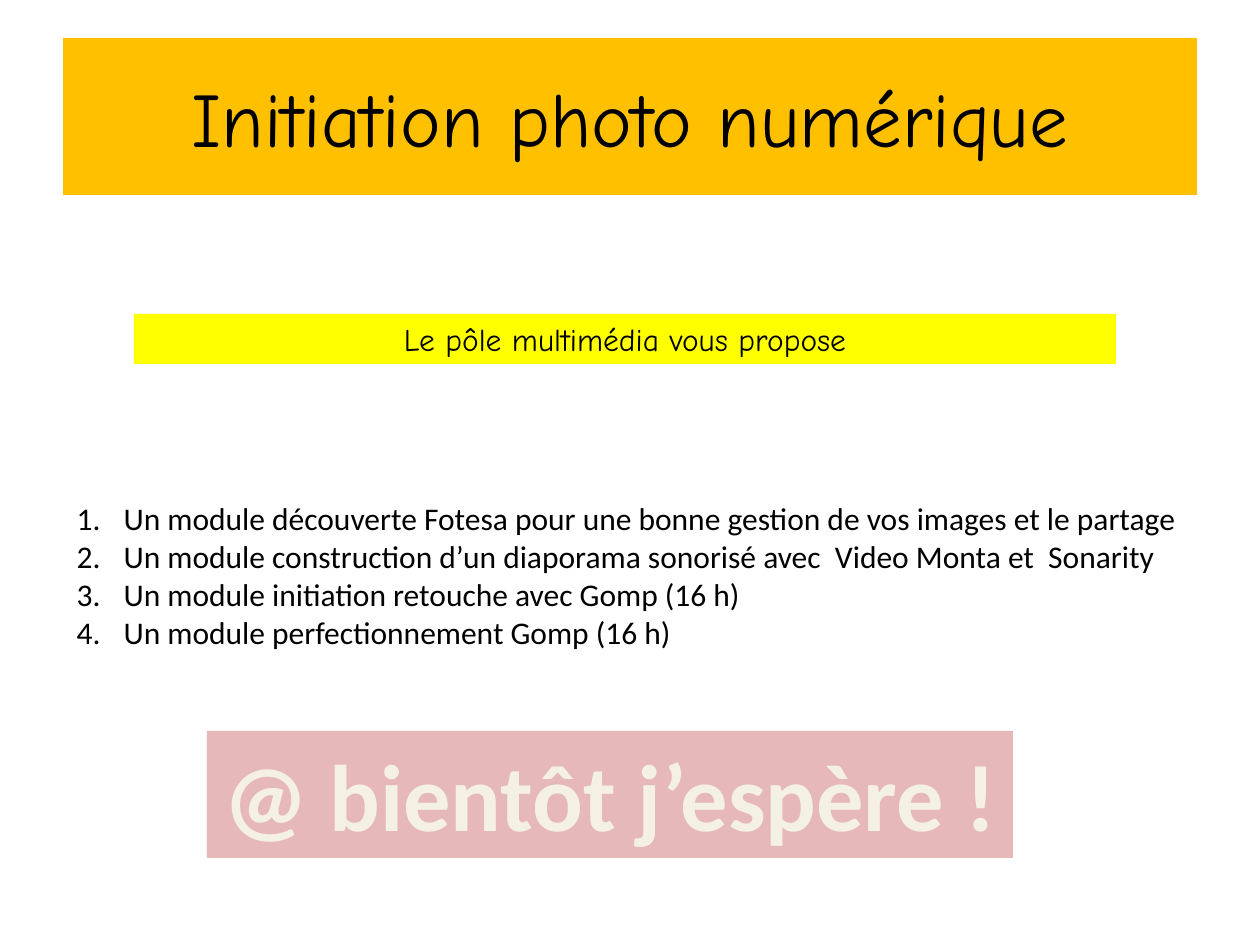
from lxml.etree import SubElement
from pptx import Presentation
from pptx.dml.color import RGBColor
from pptx.enum.shapes import MSO_SHAPE
from pptx.enum.text import MSO_ANCHOR, MSO_AUTO_SIZE, PP_ALIGN
from pptx.oxml.ns import qn
from pptx.util import Pt

BLACK = RGBColor(0x00, 0x00, 0x00)
ORANGE = RGBColor(0xFF, 0xC0, 0x00)
YELLOW = RGBColor(0xFF, 0xFF, 0x00)
PINK = RGBColor(0xE6, 0xB9, 0xB8)
CREAM = RGBColor(0xF4, 0xF1, 0xE3)

TITLE = "Initiation photo numérique"
MODULES = [
    "Un module découverte Fotesa pour une bonne gestion de vos images et le partage",
    "Un module construction d’un diaporama sonorisé avec  Video Monta et  Sonarity",
    "Un module initiation retouche avec Gomp (16 h)",
    "Un module perfectionnement Gomp (16 h)",
]
BANNERS = [
    ("Le pôle multimédia vous propose", (134, 314, 982, 50), YELLOW, "Comic Neue", 18, BLACK, False),
    ("@ bientôt j’espère !", (207, 731, 806, 127), PINK, "Calibri", 54, CREAM, True),
]

EMU_PER_PX = 914400 / 126
INDENT = 47


def px(length):
    return round(length * EMU_PER_PX)


def place(shape, box):
    shape.left, shape.top, shape.width, shape.height = map(px, box)


def fill(shape, color):
    shape.fill.solid()
    shape.fill.fore_color.rgb = color


def format_text(shape, font_name, size, color, align, bold=False):
    shape.text_frame.auto_size = MSO_AUTO_SIZE.NONE
    for paragraph in shape.text_frame.paragraphs:
        paragraph.alignment = align
        for run in paragraph.runs:
            run.font.name = font_name
            run.font.size = Pt(size)
            run.font.bold = bold
            run.font.color.rgb = color


def number_paragraph(paragraph):
    paragraph.space_before = Pt(0)
    properties = paragraph._p.get_or_add_pPr()
    properties.set("marL", str(px(INDENT)))
    properties.set("indent", str(-px(INDENT)))
    SubElement(properties, qn("a:buFont"), typeface="+mj-lt")
    SubElement(properties, qn("a:buAutoNum"), type="arabicPeriod")


def add_banner(slide, text, box, color, font_name, size, font_color, bold):
    banner = slide.shapes.add_shape(MSO_SHAPE.RECTANGLE, *map(px, box))
    banner.shadow.inherit = False
    fill(banner, color)
    banner.line.fill.background()
    banner.text_frame.text = text
    banner.text_frame.word_wrap = not bold
    banner.text_frame.vertical_anchor = MSO_ANCHOR.TOP
    format_text(banner, font_name, size, font_color, PP_ALIGN.CENTER, bold)


def main():
    presentation = Presentation()
    presentation.slide_width, presentation.slide_height = px(1260), px(945)
    slide = presentation.slides.add_slide(presentation.slide_layouts[1])
    title, modules = slide.placeholders

    place(title, (63, 38, 1134, 157))
    fill(title, ORANGE)
    title.text_frame.text = TITLE
    format_text(title, "Comic Neue", 44, BLACK, PP_ALIGN.CENTER)

    place(modules, (64, 493, 1142, 165))
    modules.text_frame.text = "\n".join(MODULES)
    format_text(modules, "Calibri", 18, BLACK, PP_ALIGN.LEFT)
    for paragraph in modules.text_frame.paragraphs:
        number_paragraph(paragraph)

    for banner in BANNERS:
        add_banner(slide, *banner)

    presentation.save("out.pptx")


if __name__ == "__main__":
    main()
